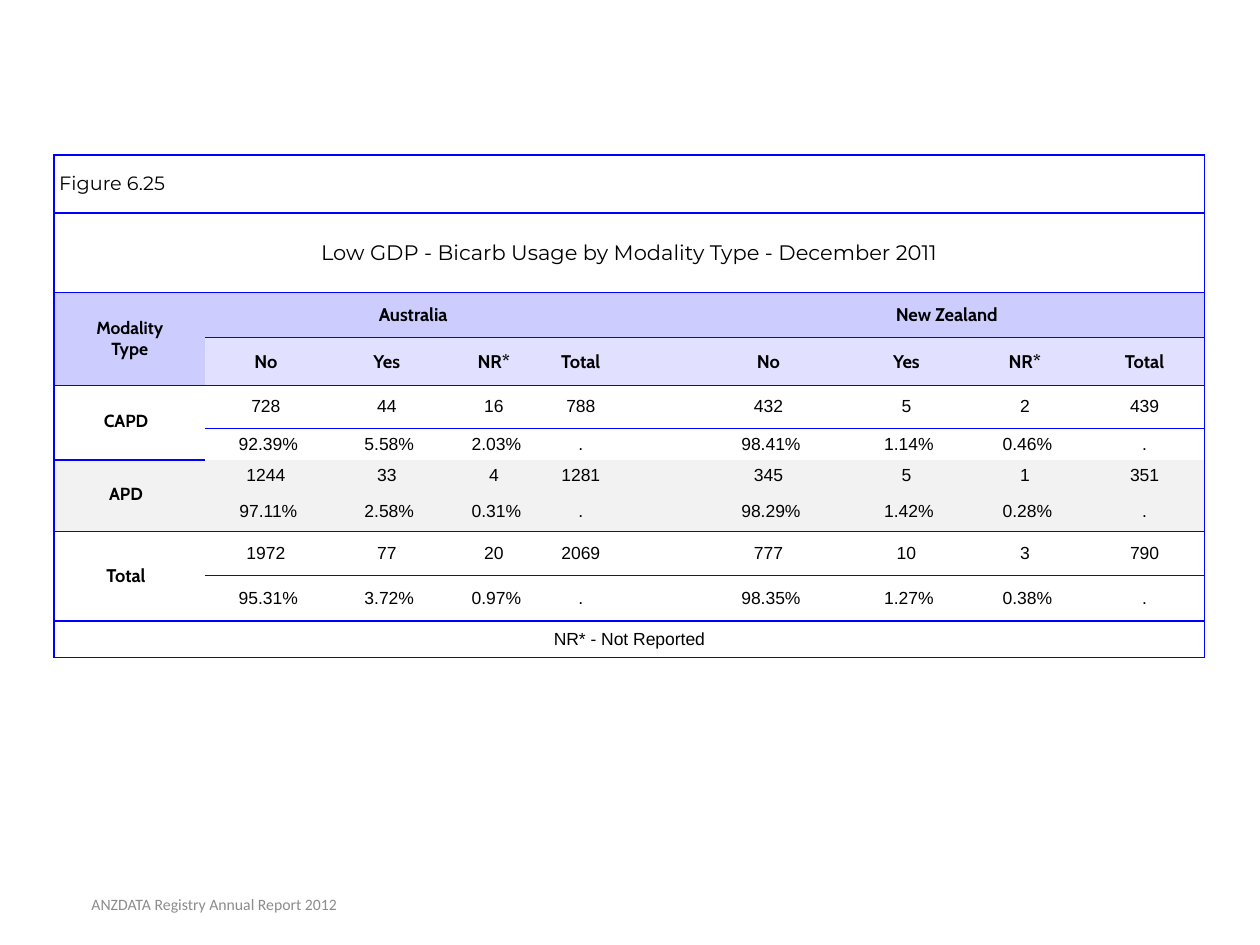
from lxml.etree import SubElement
from pptx import Presentation
from pptx.dml.color import RGBColor
from pptx.enum.text import MSO_ANCHOR, PP_ALIGN
from pptx.oxml.ns import qn
from pptx.util import Inches, Pt

BLACK = RGBColor(0, 0, 0)
BLUE = RGBColor(0x00, 0x00, 0xFF)
LILAC = RGBColor(0xCC, 0xCC, 0xFF)
PALE = RGBColor(0xE1, 0xE1, 0xFF)
GREY = RGBColor(0xF2, 0xF2, 0xF2)
DIM = RGBColor(0x8C, 0x8C, 0x8C)

WIDE, HIGH = Inches(10), Inches(7.5)
COLS = [1.2, 0.96, 0.96, 0.74, 0.64, 0.54, 1.26, 0.93, 0.95, 0.95]
ROWS = [0.46, 0.63, 0.36, 0.38, 0.34, 0.25, 0.25, 0.32, 0.35, 0.36, 0.29]
SPOTS = [1, 2, 3, 4, 6, 7, 8, 9]  # value columns; column 5 is a gap
HEADS = ["No", "Yes", "NR*", "Total"]
FILLS = {2: LILAC, 3: PALE, 6: GREY, 7: GREY}
MERGES = [(0, 0, 1, 10), (1, 0, 1, 10), (2, 0, 2, 1), (2, 1, 1, 4),
          (2, 6, 1, 4), (4, 0, 2, 1), (6, 0, 2, 1), (8, 0, 2, 1),
          (10, 0, 1, 10)]  # row, column, rows, columns
NO_GRID = "{2D5ABB26-0587-4C30-8999-92F81FD0307C}"

# Label, label size, label line spacing, counts, shares
DATA = [
    ("CAPD", 10, 0.75, [728, 44, 16, 788, 432, 5, 2, 439],
     ["92.39%", "5.58%", "2.03%", ".", "98.41%", "1.14%", "0.46%", "."]),
    ("APD", 10, 0.75, [1244, 33, 4, 1281, 345, 5, 1, 351],
     ["97.11%", "2.58%", "0.31%", ".", "98.29%", "1.42%", "0.28%", "."]),
    ("Total", 10.5, 1, [1972, 77, 20, 2069, 777, 10, 3, 790],
     ["95.31%", "3.72%", "0.97%", ".", "98.35%", "1.27%", "0.38%", "."]),
]


def add_run(para, text, face, size, color=BLACK, bold=False):
    run = para.add_run()
    run.text = text
    font = run.font
    font.name, font.size, font.bold = face, Pt(size), bold
    font.color.rgb = color


def write(cell, lines, face, size, bold=False, align=PP_ALIGN.CENTER,
          after=None, lead=None):
    frame = cell.text_frame
    for i, line in enumerate(lines):
        para = frame.add_paragraph() if i else frame.paragraphs[0]
        para.alignment = align
        if after:
            para.space_after = Pt(after)
        if lead:
            para.line_spacing = lead
        add_run(para, line, face, size, bold=bold)


def rule(row, col):
    """Width of the line above a row, or 0 for none."""
    if row == 8:
        return 0.75
    if row in (0, 1, 2, 4, 10, 11):
        return 1
    return int(row == 3 and col > 0 or row == 6 and col == 0)


def draw_edge(cell, side, width):
    if width:
        line = SubElement(cell._tc.get_or_add_tcPr(), qn("a:ln" + side),
                          w=str(Pt(width)))
        fill = SubElement(line, qn("a:solidFill"))
        SubElement(fill, qn("a:srgbClr"), val=str(BLUE))


def style_cell(grid, row, col):
    cell = grid.cell(row, col)
    tall = cell.span_height if cell.is_merge_origin else 1
    span = cell.span_width if cell.is_merge_origin else 1
    cell.margin_left = cell.margin_right = Inches(0.04)
    cell.margin_top = cell.margin_bottom = Inches(0.04 if row < 2 else 0.02)
    cell.vertical_anchor = MSO_ANCHOR.MIDDLE
    draw_edge(cell, "L", int(col == 0))
    draw_edge(cell, "R", int(col + span == len(COLS)))
    draw_edge(cell, "T", rule(row, col))
    draw_edge(cell, "B", rule(row + tall, col))
    if row in FILLS:
        cell.fill.solid()
        cell.fill.fore_color.rgb = FILLS[row]
    else:
        cell.fill.background()
    # Keep empty cells from stretching their row
    para = cell.text_frame.paragraphs[0]
    SubElement(para._p, qn("a:endParaRPr"), sz="1000")


def add_grid(slide):
    frame = slide.shapes.add_table(
        len(ROWS), len(COLS), Inches(0.43), Inches(1.23),
        Inches(sum(COLS)), Inches(sum(ROWS)))
    grid = frame.table
    grid.first_row = grid.horz_banding = False
    grid._tbl.tblPr.find(qn("a:tableStyleId")).text = NO_GRID
    for col, size in zip(grid.columns, COLS):
        col.width = Inches(size)
    for row, size in zip(grid.rows, ROWS):
        row.height = Inches(size)
    for row, col, tall, span in MERGES:
        grid.cell(row, col).merge(grid.cell(row + tall - 1, col + span - 1))
    for row in range(len(ROWS)):
        for col in range(len(COLS)):
            style_cell(grid, row, col)
    return grid


def fill_heads(grid):
    write(grid.cell(0, 0), ["Figure 6.25"], "Montserrat", 11,
          align=PP_ALIGN.LEFT)
    write(grid.cell(1, 0),
          ["Low GDP - Bicarb Usage by Modality Type - December 2011"],
          "Montserrat", 12)
    write(grid.cell(2, 0), ["Modality", "Type"], "Cabin", 10, True)
    for col, name in ((1, "Australia"), (6, "New Zealand")):
        write(grid.cell(2, col), [name], "Cabin", 10.5, True)
    for col, name in zip(SPOTS, HEADS * 2):
        write(grid.cell(3, col), [name], "Cabin", 10.5, True)


def fill_data(grid):
    for i, (name, size, lead, counts, shares) in enumerate(DATA):
        row = 4 + 2 * i
        label = grid.cell(row, 0)
        label.margin_right = Inches(0.1)
        write(label, [name], "Cabin", size, True, lead=lead)
        for col, count, share in zip(SPOTS, counts, shares):
            write(grid.cell(row, col), [str(count)], "Arial", 10, after=14)
            text = share if share == "." else " " + share
            write(grid.cell(row + 1, col), [text], "Arial", 10, after=14)
    write(grid.cell(10, 0), ["NR* - Not Reported"], "Arial", 10, after=14)


def add_foot(slide):
    box = slide.shapes.add_textbox(int(WIDE * 0.02), int(HIGH * 0.93),
                                   int(WIDE * 0.3), Inches(0.4))
    frame = box.text_frame
    frame.word_wrap = True
    frame.vertical_anchor = MSO_ANCHOR.MIDDLE
    para = frame.paragraphs[0]
    para.alignment = PP_ALIGN.CENTER
    add_run(para, "ANZDATA Registry Annual Report 2012", "Calibri", 9, DIM)


def main():
    deck = Presentation()
    deck.slide_width, deck.slide_height = WIDE, HIGH
    slide = deck.slides.add_slide(deck.slide_layouts[6])
    # Table
    grid = add_grid(slide)
    fill_heads(grid)
    fill_data(grid)
    # Footer
    add_foot(slide)
    deck.save("out.pptx")


if __name__ == "__main__":
    main()
